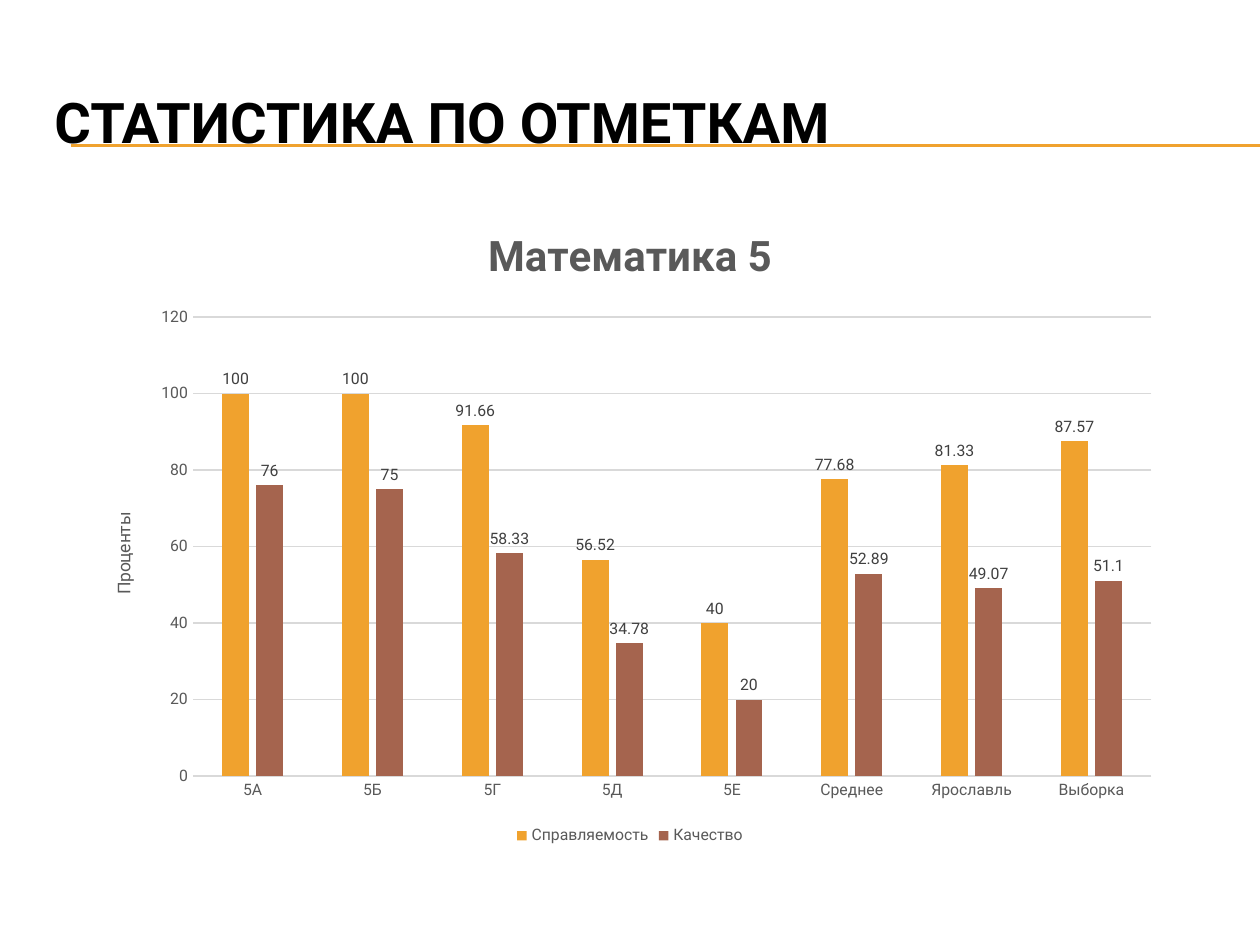
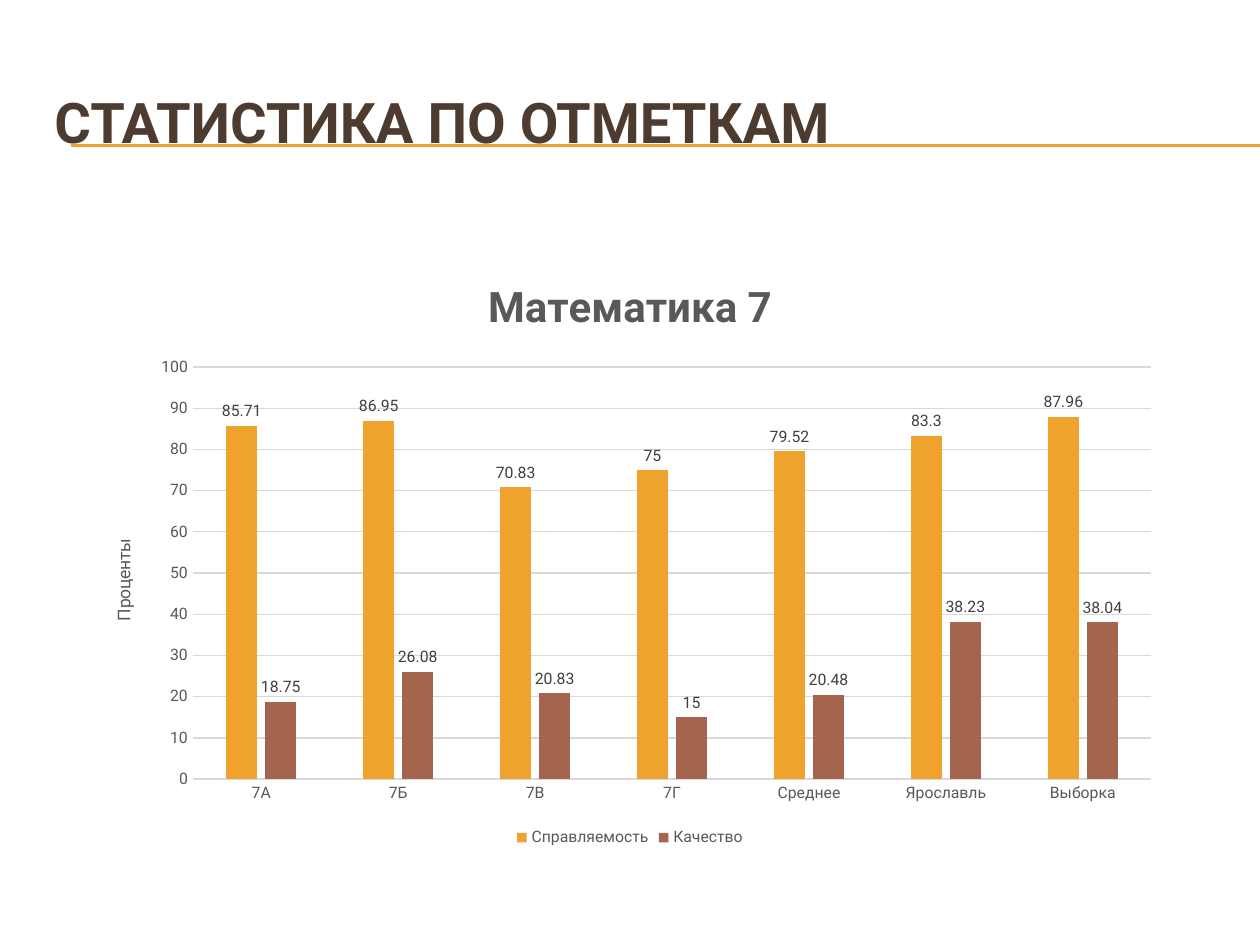
from pptx import Presentation
from pptx.chart.data import CategoryChartData
from pptx.dml.color import RGBColor
from pptx.enum.chart import XL_CHART_TYPE, XL_LABEL_POSITION, XL_LEGEND_POSITION, XL_TICK_MARK
from pptx.enum.shapes import MSO_CONNECTOR
from pptx.enum.text import MSO_ANCHOR
from pptx.oxml.ns import qn
from pptx.util import Pt
from lxml import etree

COLUMNS = XL_CHART_TYPE.COLUMN_CLUSTERED
OUTSIDE = XL_LABEL_POSITION.OUTSIDE_END
BOTTOM = XL_LEGEND_POSITION.BOTTOM
NO_TICK = XL_TICK_MARK.NONE
STRAIGHT = MSO_CONNECTOR.STRAIGHT
MIDDLE = MSO_ANCHOR.MIDDLE

SCALE = 914400 / 126
PAGE_WIDTH, PAGE_HEIGHT = 1260, 945
FONT = "Roboto"
COLORS = {
    "black": "000000",
    "brown": "4E3B30",
    "orange": "F0A22E",
    "rust": "A5644E",
    "text": "595959",
    "label": "404040",
    "grid": "D9D9D9",
}
STYLES = {
    "chart": {"size": Pt(10), "bold": False},
    "heading": {"size": Pt(32), "bold": True},
    "chart_title": {"size": Pt(24), "bold": True},
    "axis_title": {"size": Pt(10), "bold": False},
    "small": {"size": Pt(9), "bold": False},
}
HEADING = "СТАТИСТИКА ПО ОТМЕТКАМ"
HEADING_BOX = (42, 63, 1197, 116)
RULE_LEFT, RULE_TOPS = 71, (145, 146)
SERIES = (("Справляемость", "orange"), ("Качество", "rust"))
SHARED_CATEGORIES = ["Среднее", "Ярославль", "Выборка"]
SLIDES = [
    {
        "heading_color": "black",
        "title": "Математика 5",
        "box": (87, 200, 1086, 650),
        "scale": (120, 20),
        "classes": ["5А", "5Б", "5Г", "5Д", "5Е"],
        "values": (
            [100, 100, 91.66, 56.52, 40, 77.68, 81.33, 87.57],
            [76, 75, 58.33, 34.78, 20, 52.89, 49.07, 51.1],
        ),
    },
    {
        "heading_color": "brown",
        "title": "Математика 7",
        "box": (87, 252, 1086, 600),
        "scale": (100, 10),
        "classes": ["7А", "7Б", "7В", "7Г"],
        "values": (
            [85.71, 86.95, 70.83, 75, 79.52, 83.3, 87.96],
            [18.75, 26.08, 20.83, 15, 20.48, 38.23, 38.04],
        ),
    },
]


def px(*lengths):
    """Turn pixel lengths into a list of EMU."""
    return [round(length * SCALE) for length in lengths]


def color(name):
    """Look up a palette colour."""
    return RGBColor.from_string(COLORS[name])


def style_font(font, style, color_name):
    """Apply a named text style and colour."""
    for attribute, value in {"name": FONT, **STYLES[style]}.items():
        setattr(font, attribute, value)
    font.color.rgb = color(color_name)


def style_line(line, color_name):
    """Give a line its colour and the shared thin width."""
    line.color.rgb = color(color_name)
    line.width = Pt(0.75)


def write(frame, text, style, color_name):
    """Write one styled run into a text frame."""
    span = frame.paragraphs[0].add_run()
    span.text = text
    style_font(span.font, style, color_name)


def add_heading(page, box, color_name):
    """Draw the double rule and the slide heading above it."""
    for top in RULE_TOPS:
        rule = page.shapes.add_connector(STRAIGHT, *px(RULE_LEFT, top, PAGE_WIDTH, top))
        style_line(rule.line, "orange")
        etree.SubElement(rule.element.spPr, qn("a:effectLst"))
    frame = page.shapes.add_textbox(*px(*box)).text_frame
    frame.word_wrap = True
    frame.vertical_anchor = MIDDLE
    write(frame, HEADING, "heading", color_name)


def style_axes(chart, maximum, step):
    """Format both axes and the gridlines."""
    for axis in (chart.category_axis, chart.value_axis):
        axis.major_tick_mark = axis.minor_tick_mark = NO_TICK
        style_font(axis.tick_labels.font, "small", "text")
    style_line(chart.category_axis.format.line, "grid")
    values = chart.value_axis
    values.minimum_scale, values.maximum_scale, values.major_unit = 0, maximum, step
    values.format.line.fill.background()
    style_line(values.major_gridlines.format.line, "grid")
    write(values.axis_title.text_frame, "Проценты", "axis_title", "text")


def style_columns(plot):
    """Set the column spacing, fills and value labels."""
    plot.gap_width, plot.overlap, plot.vary_by_categories = 219, -27, False
    for series, (_, color_name) in zip(plot.series, SERIES):
        series.format.fill.solid()
        series.format.fill.fore_color.rgb = color(color_name)
        series.invert_if_negative = False
        labels = series.data_labels
        labels.show_value = True
        labels.position = OUTSIDE
        style_font(labels.font, "small", "label")


def add_marks_chart(page, box, content):
    """Draw the chart of marks by class."""
    data = CategoryChartData()
    data.categories = content["classes"] + SHARED_CATEGORIES
    for (name, _), values in zip(SERIES, content["values"]):
        data.add_series(name, values)
    chart = page.shapes.add_chart(COLUMNS, *px(*box), data).chart
    style_font(chart.font, "chart", "black")
    chart.has_title = True
    write(chart.chart_title.text_frame, content["title"], "chart_title", "text")
    chart.chart_title.include_in_layout = False
    chart.has_legend = True
    chart.legend.position = BOTTOM
    chart.legend.include_in_layout = False
    style_font(chart.legend.font, "small", "text")
    style_axes(chart, *content["scale"])
    style_columns(chart.plots[0])


def main():
    """Build the deck and save it."""
    deck = Presentation()
    deck.slide_width, deck.slide_height = px(PAGE_WIDTH, PAGE_HEIGHT)
    for content in SLIDES:
        page = deck.slides.add_slide(deck.slide_layouts[6])
        add_heading(page, HEADING_BOX, content["heading_color"])
        add_marks_chart(page, content["box"], content)
    deck.save("out.pptx")


if __name__ == "__main__":
    main()
